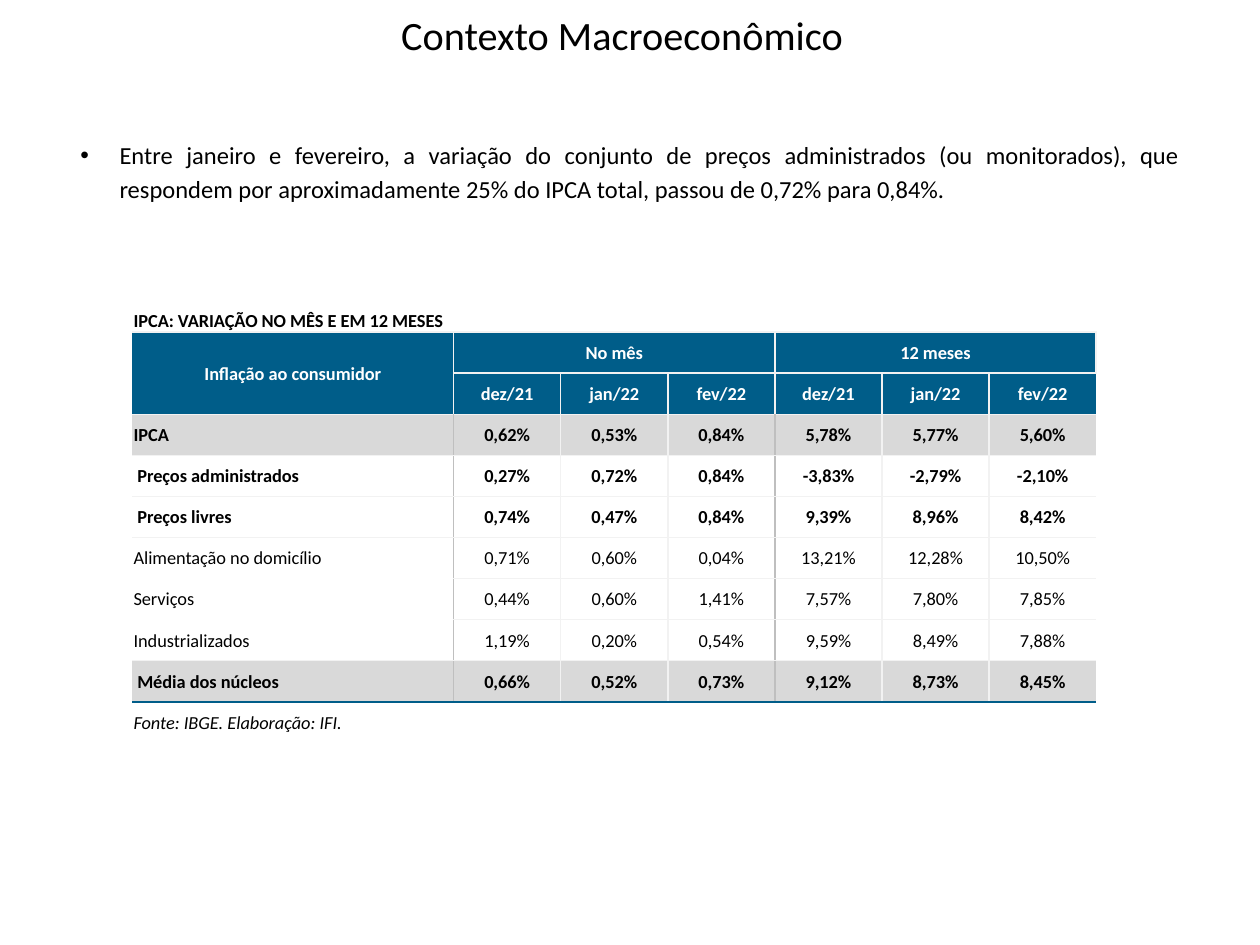
from dataclasses import dataclass

from lxml.etree import SubElement
from pptx import Presentation
from pptx.dml.color import RGBColor
from pptx.enum.text import MSO_ANCHOR, PP_ALIGN
from pptx.oxml.ns import qn
from pptx.util import Inches, Pt


@dataclass(frozen=True)
class Theme:
    font: str = "Calibri"
    black: str = "000000"
    white: str = "FFFFFF"
    blue: str = "005D89"
    band: str = "D9D9D9"
    grid: str = "F2F2F2"
    divider: str = "BFBFBF"
    title: float = 23
    body: float = 14
    table: float = 10.5


THEME = Theme()
TITLE = "Contexto Macroeconômico"
BULLET = (
    "Entre janeiro e fevereiro, a variação do conjunto de preços administrados "
    "(ou monitorados), que respondem por aproximadamente 25% do IPCA total, "
    "passou de 0,72% para 0,84%."
)
CAPTION = "IPCA: VARIAÇÃO NO MÊS E EM 12 MESES"
SOURCE = "Fonte: IBGE. Elaboração: IFI."
MONTHS = ["dez/21", "jan/22", "fev/22"]
RATES = [
    ["IPCA", "0,62%", "0,53%", "0,84%", "5,78%", "5,77%", "5,60%"],
    ["Preços administrados", "0,27%", "0,72%", "0,84%", "-3,83%", "-2,79%", "-2,10%"],
    ["Preços livres", "0,74%", "0,47%", "0,84%", "9,39%", "8,96%", "8,42%"],
    ["Alimentação no domicílio", "0,71%", "0,60%", "0,04%", "13,21%", "12,28%", "10,50%"],
    ["Serviços", "0,44%", "0,60%", "1,41%", "7,57%", "7,80%", "7,85%"],
    ["Industrializados", "1,19%", "0,20%", "0,54%", "9,59%", "8,49%", "7,88%"],
    ["Média dos núcleos", "0,66%", "0,52%", "0,73%", "9,12%", "8,73%", "8,45%"],
]
ROWS = [
    [CAPTION] + [""] * 6,
    ["Inflação ao consumidor", "No mês", "", "", "12 meses", "", ""],
    [""] + MONTHS * 2,
    *RATES,
    [SOURCE] + [""] * 6,
]
FIRST_RATE, LAST_RATE, SOURCE_ROW = 3, 9, 10
BAND_ROWS = (3, 9)
INDENTED_ROWS = (4, 5, 9)
PLAIN_ROWS = (6, 7, 8)
SPANS = [(0, 0, 0, 6), (1, 0, 2, 0), (1, 1, 1, 3), (1, 4, 1, 6)]


def add_run(p, text, size, color, bold=False, italic=False):
    r = p.add_run()
    r.text = text
    r.font.name = THEME.font
    r.font.size = Pt(size)
    r.font.bold = bold
    r.font.italic = italic
    r.font.color.rgb = RGBColor.from_string(color)


def add_text(s, box, text, size, align, spacing, anchor=MSO_ANCHOR.TOP):
    tf = s.shapes.add_textbox(*map(Inches, box)).text_frame
    tf.word_wrap = True
    tf.vertical_anchor = anchor
    p = tf.paragraphs[0]
    p.alignment = align
    p.line_spacing = spacing
    add_run(p, text, size, THEME.black)
    return p


def add_bullet(p, indent):
    p.space_after = Pt(6)
    pPr = p._p.get_or_add_pPr()
    pPr.set("marL", str(Inches(indent)))
    pPr.set("indent", str(-Inches(indent)))
    SubElement(pPr, qn("a:buFont"), typeface="Arial")
    SubElement(pPr, qn("a:buChar"), char="•")


def cell_borders(row, col):
    grid, blue = (THEME.grid, 1), (THEME.blue, 1.5)
    if row == 0:
        return {"B": grid}
    if row == SOURCE_ROW:
        return {"T": blue}
    divider = (THEME.divider, 1) if row >= FIRST_RATE else grid
    borders = {"T": grid, "B": blue if row == LAST_RATE else grid}
    if col > 0:
        borders["L"] = divider if col in (1, 4) else grid
    if col < 6:
        borders["R"] = divider if col in (0, 3) else grid
    if col == 0 and row in PLAIN_ROWS[1:]:
        del borders["T"]
    if col == 0 and row in PLAIN_ROWS[:-1]:
        del borders["B"]
    return borders


def draw_borders(cell, borders):
    tcPr = cell._tc.get_or_add_tcPr()
    for side in "LRTB":
        color, width = borders.get(side, (None, 0))
        ln = SubElement(tcPr, qn(f"a:ln{side}"), w=str(Pt(width)))
        if color:
            fill = SubElement(ln, qn("a:solidFill"))
            SubElement(fill, qn("a:srgbClr"), val=color)
        else:
            SubElement(ln, qn("a:noFill"))


def style_cell(cell, row, col, text):
    header = row in (1, 2)
    cell.margin_left = Inches(0.04 if col == 0 and row in INDENTED_ROWS else 0.01)
    cell.margin_right = cell.margin_top = Inches(0.01)
    cell.margin_bottom = 0
    cell.vertical_anchor = MSO_ANCHOR.BOTTOM if row == 0 else MSO_ANCHOR.MIDDLE
    draw_borders(cell, cell_borders(row, col))
    color = THEME.blue if header else THEME.band if row in BAND_ROWS else THEME.white
    cell.fill.solid()
    cell.fill.fore_color.rgb = RGBColor.from_string(color)
    if text:
        p = cell.text_frame.paragraphs[0]
        if row == 0:
            p.alignment = PP_ALIGN.LEFT
        else:
            p.alignment = PP_ALIGN.CENTER if header or col else PP_ALIGN.JUSTIFY
        add_run(p, text, THEME.table, THEME.white if header else THEME.black,
                bold=row not in PLAIN_ROWS + (SOURCE_ROW,), italic=row == SOURCE_ROW)


def add_rates_table(s, left, top):
    widths = [2.55] + [0.85] * 6
    height = 0.326
    frame = s.shapes.add_table(len(ROWS), len(widths), Inches(left), Inches(top),
                               Inches(sum(widths)), Inches(height * len(ROWS)))
    table = frame.table
    table.first_row = table.horz_banding = False
    for column, width in zip(table.columns, widths):
        column.width = Inches(width)
    for row in table.rows:
        row.height = Inches(height)
    for i, texts in enumerate(ROWS):
        for j, text in enumerate(texts):
            style_cell(table.cell(i, j), i, j, text)
    for top_row, first, bottom_row, last in SPANS:
        table.cell(top_row, first).merge(table.cell(bottom_row, last))


def main():
    prs = Presentation()
    prs.slide_width, prs.slide_height = Inches(10), Inches(7.5)
    s = prs.slides.add_slide(prs.slide_layouts[6])
    add_text(s, (2.96, 0, 3.96, 0.59), TITLE, THEME.title, PP_ALIGN.CENTER, 0.9,
             MSO_ANCHOR.MIDDLE)
    p = add_text(s, (0.54, 1.03, 8.92, 0.98), BULLET, THEME.body, PP_ALIGN.JUSTIFY, 1.15)
    add_bullet(p, 0.31)
    add_rates_table(s, 1.05, 2.31)
    prs.save("out.pptx")


if __name__ == "__main__":
    main()
